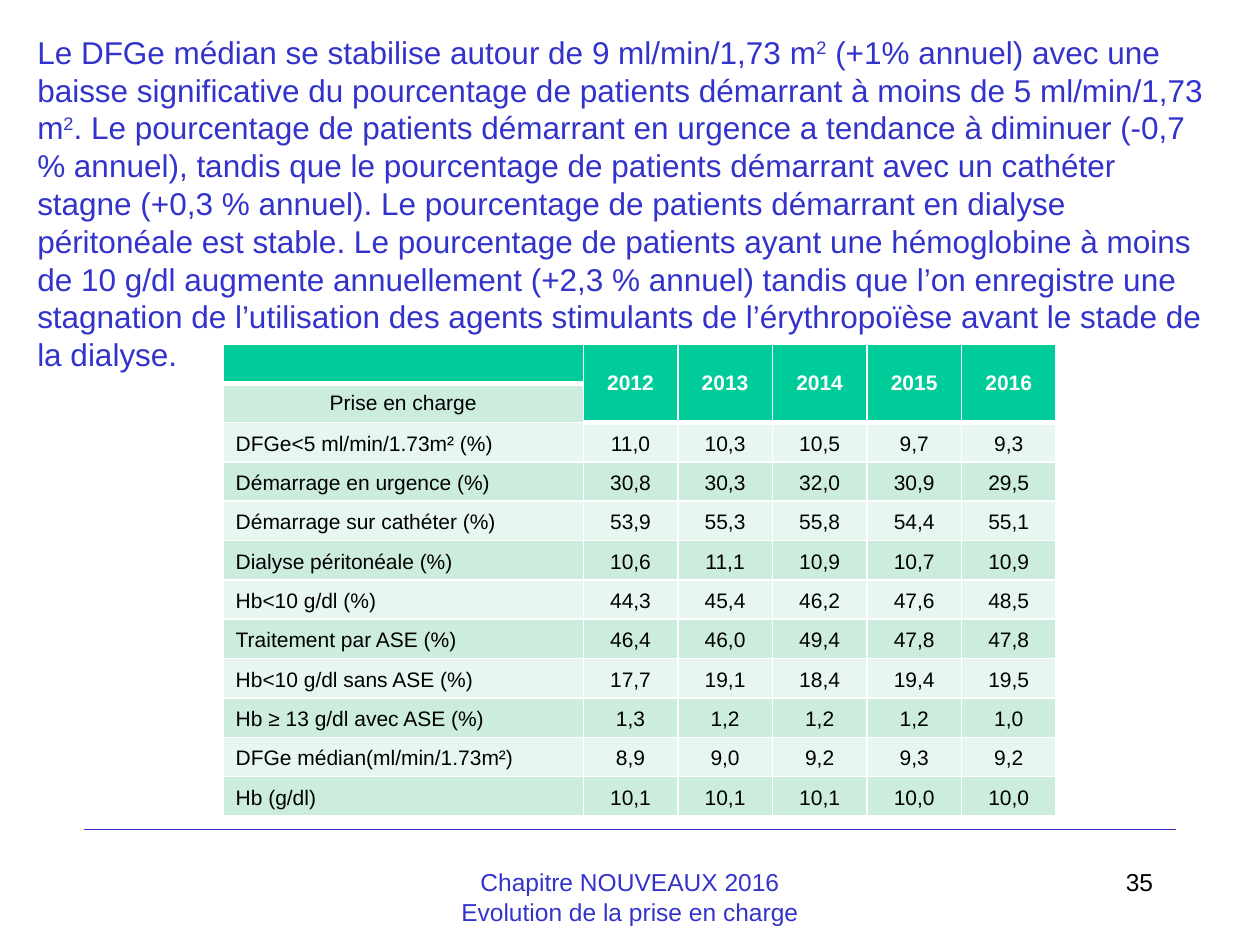
import pptx
import pptx.util
import pptx.dml.color
import pptx.enum.text
import pptx.enum.shapes
import pptx.oxml.ns
from lxml import etree

Pt = pptx.util.Pt
ALIGN = pptx.enum.text.PP_ALIGN
ANCHOR = pptx.enum.text.MSO_ANCHOR
qn = pptx.oxml.ns.qn

FONT = "Arial"
COLORS = {"blue": "3333CC", "black": "000000", "white": "FFFFFF",
          "header": "00CC99", "dark": "CCECDE", "light": "E7F6EF"}

# Content: (text, superscript) pairs for the commentary
COMMENTARY = [
    ("Le DFGe médian se stabilise autour de 9 ml/min/1,73 m", False),
    ("2", True),
    (" (+1% annuel) avec une baisse significative du pourcentage de patients "
     "démarrant à moins de 5 ml/min/1,73 m", False),
    ("2", True),
    (". Le pourcentage de patients démarrant en urgence a tendance à diminuer "
     "(-0,7 % annuel), tandis que le pourcentage de patients démarrant avec un "
     "cathéter stagne (+0,3 % annuel). Le pourcentage de patients démarrant en "
     "dialyse péritonéale est stable. Le pourcentage de patients ayant une "
     "hémoglobine à moins de 10 g/dl augmente annuellement (+2,3 % annuel) "
     "tandis que l’on enregistre une stagnation de l’utilisation des agents "
     "stimulants de l’érythropoïèse avant le stade de la dialyse.", False),
]
FOOTER = ["Chapitre NOUVEAUX 2016", "Evolution de la prise en charge"]
PAGE_NUMBER = "35"
YEARS = ["2012", "2013", "2014", "2015", "2016"]
ROW_TITLE = "Prise en charge"
INDICATORS = [
    ("DFGe<5 ml/min/1.73m² (%)", "11,0", "10,3", "10,5", "9,7", "9,3"),
    ("Démarrage en urgence (%)", "30,8", "30,3", "32,0", "30,9", "29,5"),
    ("Démarrage sur cathéter (%)", "53,9", "55,3", "55,8", "54,4", "55,1"),
    ("Dialyse péritonéale (%)", "10,6", "11,1", "10,9", "10,7", "10,9"),
    ("Hb<10 g/dl (%)", "44,3", "45,4", "46,2", "47,6", "48,5"),
    ("Traitement par ASE (%)", "46,4", "46,0", "49,4", "47,8", "47,8"),
    ("Hb<10 g/dl sans ASE (%)", "17,7", "19,1", "18,4", "19,4", "19,5"),
    ("Hb ≥ 13 g/dl avec ASE (%)", "1,3", "1,2", "1,2", "1,2", "1,0"),
    ("DFGe médian(ml/min/1.73m²)", "8,9", "9,0", "9,2", "9,3", "9,2"),
    ("Hb (g/dl)", "10,1", "10,1", "10,1", "10,0", "10,0"),
]

# Layout in points
TABLE_LEFT, TABLE_TOP = 127.5, 196.5
LABEL_WIDTH, YEAR_WIDTH, ROW_HEIGHT = 205.8, 54.05, 22.48


def rgb(name):
    return pptx.dml.color.RGBColor.from_string(COLORS[name])


def add_run(paragraph, text, size, color, bold=False, superscript=False):
    run = paragraph.add_run()
    run.text = text
    run.font.name = FONT
    run.font.size = Pt(size)
    run.font.bold = bold
    run.font.color.rgb = rgb(color)
    if superscript:
        run.font._element.set("baseline", "30000")


def add_text(slide, box, paragraphs, size, color, align):
    frame = slide.shapes.add_textbox(*map(Pt, box)).text_frame
    frame.word_wrap = True
    for index, runs in enumerate(paragraphs):
        paragraph = frame.add_paragraph() if index else frame.paragraphs[0]
        paragraph.alignment = align
        for text, superscript in runs:
            add_run(paragraph, text, size, color, superscript=superscript)


def style_cell(cell, text, fill, color="black", bold=False,
               align=ALIGN.CENTER, anchor=ANCHOR.MIDDLE, bottom=1):
    cell.vertical_anchor = anchor
    properties = cell._tc.get_or_add_tcPr()
    for side, width in (("L", 1), ("R", 1), ("T", 1), ("B", bottom)):
        border = etree.SubElement(properties, qn("a:ln" + side), w=str(Pt(width)))
        paint = etree.SubElement(border, qn("a:solidFill"))
        etree.SubElement(paint, qn("a:srgbClr"), val=COLORS["white"])
    cell.fill.solid()
    cell.fill.fore_color.rgb = rgb(fill)
    paragraph = cell.text_frame.paragraphs[0]
    paragraph.alignment = align
    if text:
        add_run(paragraph, text, 12, color, bold)
    else:  # keeps an empty cell from stretching its row
        etree.SubElement(paragraph._p, qn("a:endParaRPr"), sz="1200")


def add_indicator_table(slide):
    rows, columns = len(INDICATORS) + 2, len(YEARS) + 1
    table = slide.shapes.add_table(
        rows, columns, Pt(TABLE_LEFT), Pt(TABLE_TOP),
        Pt(LABEL_WIDTH + YEAR_WIDTH * len(YEARS)), Pt(ROW_HEIGHT * rows)).table
    for index, column in enumerate(table.columns):
        column.width = Pt(YEAR_WIDTH if index else LABEL_WIDTH)
    for row in table.rows:
        row.height = Pt(ROW_HEIGHT)

    # Two-row header, the years spanning both rows
    style_cell(table.cell(0, 0), "", "header", bottom=3)
    style_cell(table.cell(1, 0), ROW_TITLE, "dark")
    for c, year in enumerate(YEARS, 1):
        style_cell(table.cell(0, c), year, "header", "white", True, bottom=3)
        style_cell(table.cell(1, c), "", "header", bottom=3)
        table.cell(0, c).merge(table.cell(1, c))

    # Banded indicator rows
    for r, indicator in enumerate(INDICATORS, 2):
        for c, text in enumerate(indicator):
            style_cell(table.cell(r, c), text, "dark" if r % 2 else "light",
                       align=ALIGN.CENTER if c else ALIGN.LEFT,
                       anchor=ANCHOR.BOTTOM)


def main():
    deck = pptx.Presentation()
    deck.slide_width, deck.slide_height = Pt(720), Pt(540)
    slide = deck.slides.add_slide(deck.slide_layouts[6])

    # Footer rule
    rule = slide.shapes.add_connector(
        pptx.enum.shapes.MSO_CONNECTOR.STRAIGHT, Pt(48), Pt(474), Pt(672), Pt(474))
    rule.line.color.rgb = rgb("blue")
    rule.line.width = Pt(1)
    etree.SubElement(rule._element.spPr, qn("a:effectLst"))

    # Page number, commentary and footer
    add_text(slide, (516, 492, 150, 36), [[(PAGE_NUMBER, False)]],
             14, "black", ALIGN.RIGHT)
    add_text(slide, (14.2, 15.2, 686, 204), [COMMENTARY], 18, "blue", ALIGN.LEFT)
    add_text(slide, (246, 492, 228, 36), [[(line, False)] for line in FOOTER],
             14, "blue", ALIGN.CENTER)

    add_indicator_table(slide)
    deck.save("out.pptx")


if __name__ == "__main__":
    main()
